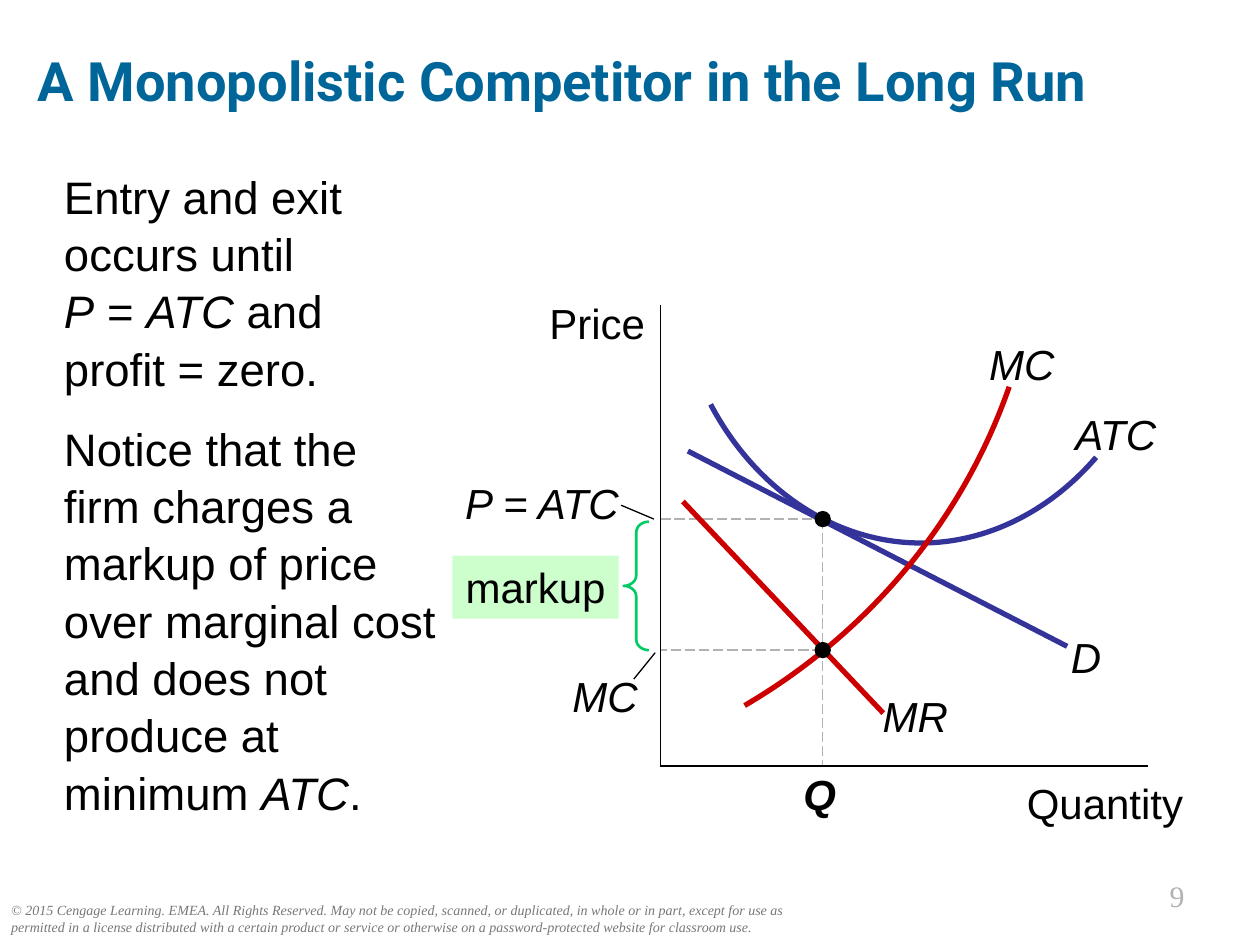
import pptx
import pptx.util
import pptx.dml.color
import pptx.enum.dml
import pptx.enum.shapes
import pptx.enum.text
import pptx.oxml.ns
from lxml import etree

Inches, Pt = pptx.util.Inches, pptx.util.Pt
ALIGN = pptx.enum.text.PP_ALIGN
SHAPE = pptx.enum.shapes.MSO_SHAPE

COLORS = {"title": "006699", "ink": "000000", "guide": "B2B2B2", "footer": "777777",
          "demand": "333399", "cost": "CC0000", "brace": "00CC66", "markup": "CCFFCC"}

# Content
TITLE = "A Monopolistic Competitor in the Long Run"
COPYRIGHT = ("© 2015 Cengage Learning. EMEA. All Rights Reserved. May not be copied, scanned, "
             "or duplicated, in whole or in part, except for use as permitted in a license "
             "distributed with a certain product or service or otherwise on a "
             "password-protected website for classroom use.")
BREAK = None
BODY = [  # (text, italic) spans
    [("Entry and exit occurs until ", False), BREAK, ("P", True), (" = ", False),
     ("ATC", True), (" and ", False), BREAK, ("profit = zero.", False)],
    [("Notice that the firm charges a markup of price over marginal cost "
      "and does not produce at minimum ", False), ("ATC", True), (".", False)],
]

# Graph geometry
ORIGIN_X, ORIGIN_Y = 5.24, 6.08
Q_X, PRICE_Y, COST_Y = 6.53, 4.12, 5.16
DOT = 0.13
GUIDES = [(Q_X, COST_Y, ORIGIN_X, COST_Y), (ORIGIN_X, PRICE_Y, Q_X, PRICE_Y),
          (Q_X, PRICE_Y, Q_X, ORIGIN_Y)]
AXES = [(ORIGIN_X, 2.42, ORIGIN_X, ORIGIN_Y), (ORIGIN_X, ORIGIN_Y, 9.11, ORIGIN_Y)]
LEADERS = [(4.93, 4.01, 5.19, PRICE_Y), (5.2, 5.18, 5.03, 5.39)]
DEMAND = (5.46, 3.58, 8.47, 5.13)
REVENUE = (5.42, 3.98, 7.01, 5.66)
# Start point, then three Bezier points per segment
ATC_CURVE = [(8.7, 3.63), (8.33, 4.06), (7.83, 4.31), (7.31, 4.31),
             (6.63, 4.31), (6, 3.89), (5.64, 3.21)]
MC_CURVE = [(5.91, 5.6), (6.9, 5.02), (7.64, 4.13), (8.01, 3.07)]
LABELS = [  # text, left, top, width, alignment, italic, bold
    ("Price", 3.51, 2.36, 1.61, ALIGN.RIGHT, False, False),
    ("Quantity", 8.05, 6.17, 1.34, ALIGN.RIGHT, False, False),
    ("ATC", 8.4, 3.24, 0.91, ALIGN.CENTER, True, False),
    ("D", 8.38, 5.01, 0.48, ALIGN.CENTER, True, False),
    ("MR", 6.94, 5.48, 0.65, ALIGN.CENTER, True, False),
    ("MC", 7.79, 2.69, 0.64, ALIGN.CENTER, True, False),
    ("Q", 6.22, 6.1, 0.57, ALIGN.CENTER, True, True),
    ("MC", 4.44, 5.32, 0.62, ALIGN.RIGHT, True, False),
    ("P = ATC", 3.59, 3.79, 1.32, ALIGN.RIGHT, True, False),
]


def rgb(name):
    return pptx.dml.color.RGBColor.from_string(COLORS[name])


def set_font(font, size, color="ink", name="Arial", bold=False, italic=False):
    font.name, font.size, font.bold, font.italic = name, Pt(size), bold, italic
    font.color.rgb = rgb(color)


def add_text(page, text, left, top, width, height, align, inset=True, **font):
    box = page.shapes.add_textbox(*map(Inches, (left, top, width, height)))
    frame = box.text_frame
    frame.word_wrap = True
    if not inset:
        frame.margin_left = frame.margin_right = frame.margin_top = frame.margin_bottom = 0
    para = frame.paragraphs[0]
    para.text, para.alignment = text, align
    set_font(para.font, **font)


def add_line(page, ends, color, width=0.75, dashed=False):
    line = page.shapes.add_connector(pptx.enum.shapes.MSO_CONNECTOR.STRAIGHT,
                                     *map(Inches, ends))
    line.line.color.rgb = rgb(color)
    line.line.width = Pt(width)
    if dashed:
        line.line.dash_style = pptx.enum.dml.MSO_LINE.LONG_DASH
    etree.SubElement(line._element.spPr, pptx.oxml.ns.qn("a:effectLst"))


def add_curve(page, points, color):
    """Draw a freeform, turning each three straight steps into one Bezier segment."""
    # The builder rounds to whole units, so points are given in EMU
    start_point, *rest = [(Inches(x), Inches(y)) for x, y in points]
    builder = page.shapes.build_freeform(*start_point)
    builder.add_line_segments(rest, close=False)
    curve = builder.convert_to_shape()
    curve.fill.background()
    curve.shadow.inherit = False
    curve.line.color.rgb = rgb(color)
    curve.line.width = Pt(3)
    steps = list(curve._element.iter(pptx.oxml.ns.qn("a:lnTo")))
    for start in range(0, len(steps), 3):
        outline = steps[start].getparent()
        segment = etree.SubElement(outline, pptx.oxml.ns.qn("a:cubicBezTo"))
        for step in steps[start:start + 3]:
            segment.append(step[0])
            outline.remove(step)


def add_shape(page, kind, left, top, width, height, fill=None):
    shape = page.shapes.add_shape(kind, *map(Inches, (left, top, width, height)))
    shape.shadow.inherit = False
    if fill:
        shape.fill.solid()
        shape.fill.fore_color.rgb = rgb(fill)
        shape.line.fill.background()
    else:
        shape.fill.background()
    return shape


def add_title(page):
    title = page.shapes.title
    title.left, title.top, title.width, title.height = map(Inches, (0.2, 0.28, 9.57, 0.71))
    title.text_frame.text = TITLE
    title.text_frame.vertical_anchor = pptx.enum.text.MSO_ANCHOR.MIDDLE
    para = title.text_frame.paragraphs[0]
    para.alignment = ALIGN.LEFT
    set_font(para.font, 31, "title", "Roboto", bold=True)


def add_body(page):
    frame = page.shapes.add_textbox(*map(Inches, (0.41, 1.27, 3.16, 5.37))).text_frame
    frame.word_wrap = True
    for index, spans in enumerate(BODY):
        para = frame.add_paragraph() if index else frame.paragraphs[0]
        para.line_spacing = 1.05
        para.space_before = Pt(13 if index else 0)
        set_font(para.font, 26)
        for item in spans:
            if item is BREAK:
                para.add_line_break()
                continue
            span = para.add_run()
            span.text, span.font.italic = item


def add_graph(page):
    for ends in GUIDES:
        add_line(page, ends, "guide", dashed=True)
    for ends in AXES + LEADERS:
        add_line(page, ends, "ink")
    add_curve(page, ATC_CURVE, "demand")
    add_line(page, DEMAND, "demand", 3)
    add_line(page, REVENUE, "cost", 3)
    add_curve(page, MC_CURVE, "cost")
    for y in (PRICE_Y, COST_Y):
        add_shape(page, SHAPE.OVAL, Q_X - DOT / 2, y - DOT / 2, DOT, DOT, "ink")
    for text, left, top, width, align, italic, bold in LABELS:
        add_text(page, text, left, top, width, 0.4, align, inset=False,
                 size=24, italic=italic, bold=bold)

    # Markup brace and tag
    brace = add_shape(page, SHAPE.LEFT_BRACE, 4.95, 4.14, 0.2, 1.02)
    brace.adjustments[0], brace.adjustments[1] = 0.42, 0.5
    brace.line.color.rgb = rgb("brace")
    brace.line.width = Pt(1.5)
    tag = add_shape(page, SHAPE.RECTANGLE, 3.59, 4.41, 1.32, 0.5, "markup")
    tag.text_frame.margin_left = tag.text_frame.margin_right = Inches(0.05)
    tag.text_frame.text = "markup"
    para = tag.text_frame.paragraphs[0]
    para.alignment = ALIGN.CENTER
    set_font(para.font, 24)


def main():
    deck = pptx.Presentation()
    deck.slide_width, deck.slide_height = Inches(10), Inches(7.5)
    page = deck.slides.add_slide(deck.slide_layouts.get_by_name("Title Only"))
    # Footer
    add_text(page, COPYRIGHT, -0.01, 7.11, 6.43, 0.37, ALIGN.LEFT,
             size=8, color="footer", name="Times New Roman", italic=True)
    add_text(page, "9", 8.25, 6.92, 1.25, 0.39, ALIGN.RIGHT,
             size=17, color="guide", name="Times New Roman")
    add_title(page)
    add_body(page)
    add_graph(page)
    deck.save("out.pptx")


if __name__ == "__main__":
    main()
